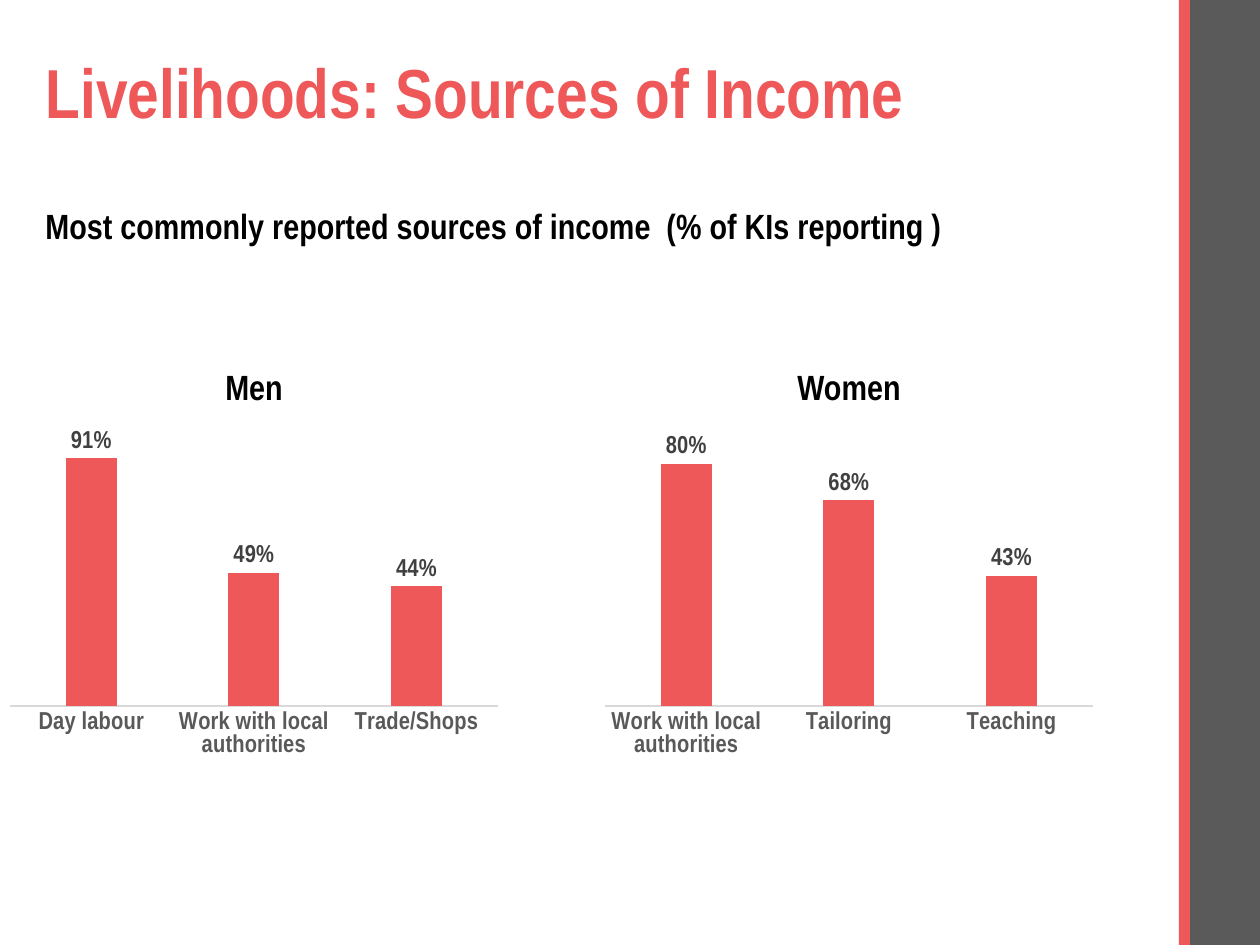
from pptx import Presentation
from pptx.chart.data import CategoryChartData
from pptx.dml.color import RGBColor
from pptx.enum.chart import XL_CHART_TYPE as CT, XL_LABEL_POSITION as LP, XL_TICK_MARK as TM
from pptx.enum.shapes import MSO_SHAPE as SH
from pptx.enum.text import MSO_ANCHOR as MA, MSO_AUTO_SIZE as AS, PP_ALIGN as PA
from pptx.util import Emu, Pt

RED, GREY, BLACK = "EE5859", "5A5A5A", "000000"
FONT = "Arial Narrow"
CHART_W, CHART_H, CHART_Y = 508, 338, 427
CHARTS = [
    ("Men", 0, 1.0, {"Day labour": 0.91, "Work with local authorities": 0.49, "Trade/Shops": 0.44}),
    ("Women", 595, 0.9, {"Work with local authorities": 0.8, "Tailoring": 0.68, "Teaching": 0.43}),
]


def px(n):
    """Turn px into EMU."""
    return Emu(round(n * 914400 / 126))


def rgb(value):
    """Turn a hex string into a colour."""
    return RGBColor.from_string(value)


class Deck:
    """Hold the style and the current slide."""

    def __init__(self):
        """Start a deck with one title-only slide."""
        self.prs = Presentation()
        self.prs.slide_width, self.prs.slide_height = px(1260), px(945)
        self.s = self.prs.slides.add_slide(self.prs.slide_layouts[5])

    def style(self, font, size, color, bold=True):
        """Set the font values of a run, a paragraph or a chart part."""
        values = {"name": FONT, "size": Pt(size), "bold": bold}
        for key, value in values.items():
            setattr(font, key, value)
        font.color.rgb = rgb(color)

    def bar(self, x, y, w, h, color):
        """Draw a plain filled rectangle."""
        sp = self.s.shapes.add_shape(SH.RECTANGLE, px(x), px(y), px(w), px(h))
        sp.shadow.inherit = False
        sp.fill.solid()
        sp.fill.fore_color.rgb = rgb(color)
        sp.line.fill.background()

    def title(self, x, y, w, h, text):
        """Place and format the slide title."""
        sp = self.s.shapes.title
        box = {"left": x, "top": y, "width": w, "height": h}
        for key, value in box.items():
            setattr(sp, key, px(value))
        tf = sp.text_frame
        tf.text = text
        tf.auto_size, tf.vertical_anchor = AS.NONE, MA.MIDDLE
        p = tf.paragraphs[0]
        p.alignment, p.line_spacing = PA.LEFT, 0.9
        self.style(p.runs[0].font, 39.6, RED)

    def text(self, x, y, w, h, text, align=PA.LEFT):
        """Add a bold line of text."""
        tf = self.s.shapes.add_textbox(px(x), px(y), px(w), px(h)).text_frame
        tf.word_wrap, tf.auto_size = True, AS.SHAPE_TO_FIT_TEXT
        p = tf.paragraphs[0]
        p.alignment = align
        r = p.add_run()
        r.text = text
        self.style(r.font, 20, BLACK)

    def chart(self, x, y, w, h, values, top):
        """Add a column chart of shares with its labels."""
        data = CategoryChartData(number_format="0%")
        data.categories = list(values)
        data.add_series("Series 1", list(values.values()))
        chart = self.s.shapes.add_chart(CT.COLUMN_CLUSTERED, px(x), px(y), px(w), px(h), data).chart
        chart.has_legend = chart.has_title = False
        self.style(chart.font, 10, BLACK, False)

        axis = chart.value_axis
        limits = {"minimum_scale": 0, "maximum_scale": top, "has_major_gridlines": False, "visible": False}
        for key, value in limits.items():
            setattr(axis, key, value)
        axis = chart.category_axis
        axis.major_tick_mark = axis.minor_tick_mark = TM.NONE
        axis.format.line.color.rgb = rgb("D9D9D9")
        axis.format.line.width = Pt(0.75)
        self.style(axis.tick_labels.font, 14, "595959")

        plot = chart.plots[0]
        plot.gap_width, plot.overlap, plot.vary_by_categories = 219, -27, False
        series = plot.series[0]
        series.format.fill.solid()
        series.format.fill.fore_color.rgb = rgb(RED)
        labels = series.data_labels
        shown = {"show_value": True, "number_format": "0%", "number_format_is_linked": False,
                 "position": LP.OUTSIDE_END}
        for key, value in shown.items():
            setattr(labels, key, value)
        self.style(labels.font, 14, "404040")


def main():
    """Build the slide and save it."""
    deck = Deck()
    deck.bar(1190, 0, 70, 945, GREY)
    deck.bar(1179, 0, 11, 945, RED)
    deck.title(33, 50, 1095, 93, "Livelihoods: Sources of Income")
    deck.text(33, 198, 1126, 55, "Most commonly reported sources of income  (% of KIs reporting )")
    for name, x, top, values in CHARTS:
        deck.text(x, 359, CHART_W, 55, name, PA.CENTER)
        deck.chart(x, CHART_Y, CHART_W, CHART_H, values, top)
    deck.prs.save("out.pptx")


if __name__ == "__main__":
    main()
